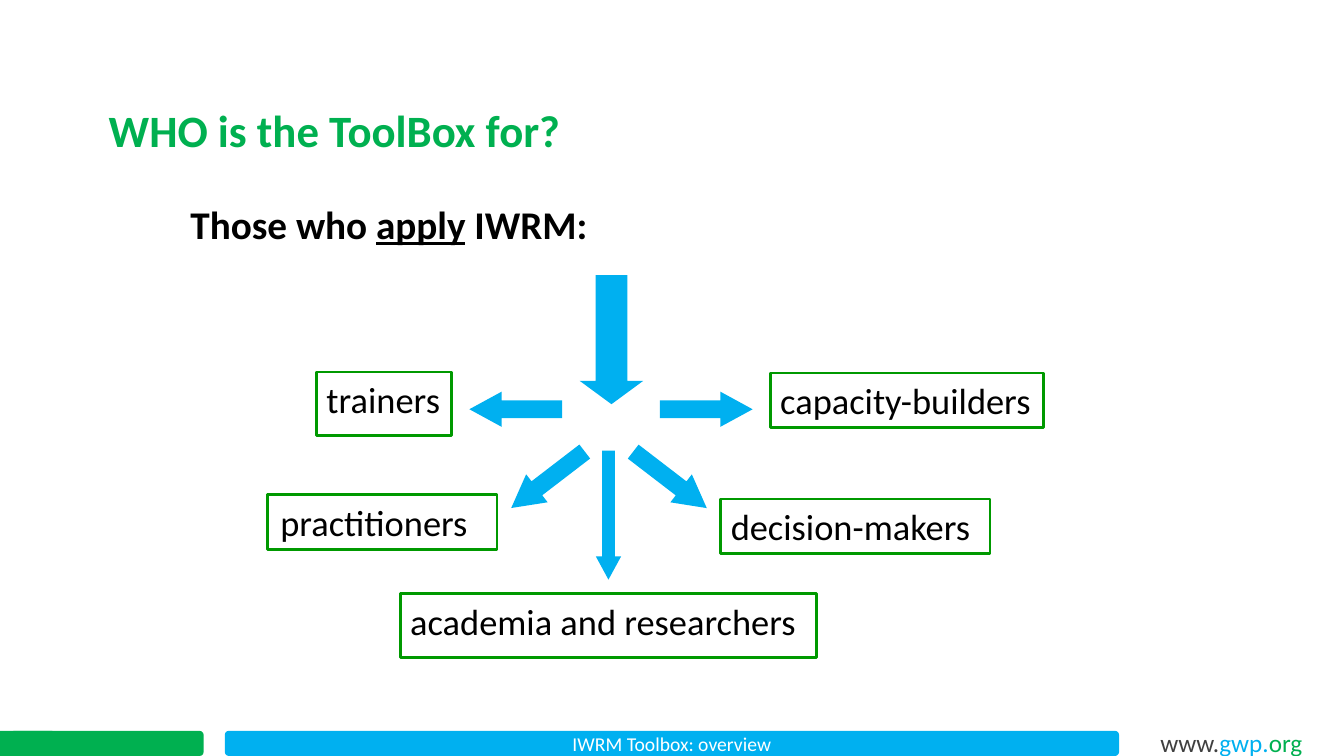
from pptx import Presentation
from pptx.dml.color import RGBColor
from pptx.enum.shapes import MSO_SHAPE as Shape
from pptx.enum.text import MSO_ANCHOR as Anchor, PP_ALIGN as Align
from pptx.util import Emu, Pt

EMU_PER_PX = 9144
GREEN = RGBColor(0x00, 0xB0, 0x50)
BLUE = RGBColor(0x00, 0xB0, 0xF0)
BORDER = RGBColor(0x00, 0x99, 0x00)
GREY = RGBColor(0x40, 0x40, 0x40)
BLACK = RGBColor(0x00, 0x00, 0x00)
WHITE = RGBColor(0xFF, 0xFF, 0xFF)


def px(length):
    return Emu(length * EMU_PER_PX)


class SlideBuilder:
    font_name = "Calibri"

    def __init__(self, presentation):
        self.slide = presentation.slides.add_slide(presentation.slide_layouts[6])

    def shape(self, kind, box, fill=None, border=None):
        shape = self.slide.shapes.add_shape(kind, *map(px, box))
        shape.shadow.inherit = False
        if fill is None:
            shape.fill.background()
        else:
            shape.fill.solid()
            shape.fill.fore_color.rgb = fill
        if border is None:
            shape.line.fill.background()
        else:
            shape.line.color.rgb = border
            shape.line.width = Pt(2)
        return shape

    def label(self, shape, runs, size, bold=False, align=Align.LEFT,
              anchor=Anchor.TOP, spacing=1.0):
        text_frame = shape.text_frame
        text_frame.word_wrap = True
        text_frame.vertical_anchor = anchor
        paragraph = text_frame.paragraphs[0]
        paragraph.alignment = align
        paragraph.line_spacing = spacing
        for text, color in runs:
            run = paragraph.add_run()
            run.text = text
            run.font.name = self.font_name
            run.font.size = Pt(size)
            run.font.bold = bold
            run.font.color.rgb = color
        return paragraph

    def text(self, box, runs, size, **style):
        text_box = self.slide.shapes.add_textbox(*map(px, box))
        return self.label(text_box, runs, size, **style)

    def audience(self, name, box, indent=10):
        shape = self.shape(Shape.RECTANGLE, box, border=BORDER)
        shape.text_frame.margin_left = px(indent)
        self.label(shape, [(name, BLACK)], 26)

    def arrow(self, box, rotation=0, head=0.917):
        shape = self.shape(Shape.DOWN_ARROW, box, fill=BLUE)
        shape.adjustments[1] = head
        shape.rotation = rotation


def main():
    presentation = Presentation()
    presentation.slide_width = px(1333)
    presentation.slide_height = px(750)
    builder = SlideBuilder(presentation)

    builder.shape(Shape.ROUNDED_RECTANGLE, (10, 725, 192, 25), fill=GREEN)
    footer = builder.shape(Shape.ROUNDED_RECTANGLE, (223, 725, 887, 25), fill=BLUE)
    builder.label(footer, [("IWRM Toolbox: overview", WHITE)], 14,
                  align=Align.CENTER, anchor=Anchor.MIDDLE)
    address = builder.shape(Shape.RECTANGLE, (1141, 712, 164, 38), fill=WHITE)
    builder.label(address, [("www.", GREY), ("gwp.", BLUE), ("org", GREEN)], 18,
                  spacing=1.15)
    builder.shape(Shape.RECTANGLE, (0, 725, 52, 25), fill=GREEN)

    builder.text((98, 101, 507, 61), [("WHO is the ToolBox for?", GREEN)], 32,
                 bold=True, anchor=Anchor.MIDDLE, spacing=0.9)
    heading = builder.text(
        (179, 199, 1019, 529),
        [("Those who ", BLACK), ("apply", BLACK), (" IWRM:", BLACK)], 28,
        bold=True, spacing=0.9)
    heading.runs[1].font.underline = True

    builder.audience("trainers", (314, 369, 134, 63))
    builder.audience("practitioners", (265, 491, 228, 54), indent=13)
    builder.audience("decision-makers", (715, 495, 267, 54))
    builder.audience("capacity-builders", (764, 370, 271, 54))
    builder.audience("academia and researchers", (397, 589, 413, 63))

    for left, top, rotation in ((494, 360, 90), (683, 360, 270),
                                (526, 430, 52.5), (647, 430, 307.5)):
        builder.arrow((left, top, 35, 92), rotation)
    builder.arrow((575, 273, 63, 128), head=0.367)
    builder.arrow((591, 447, 25, 128))

    presentation.save("out.pptx")


if __name__ == "__main__":
    main()
